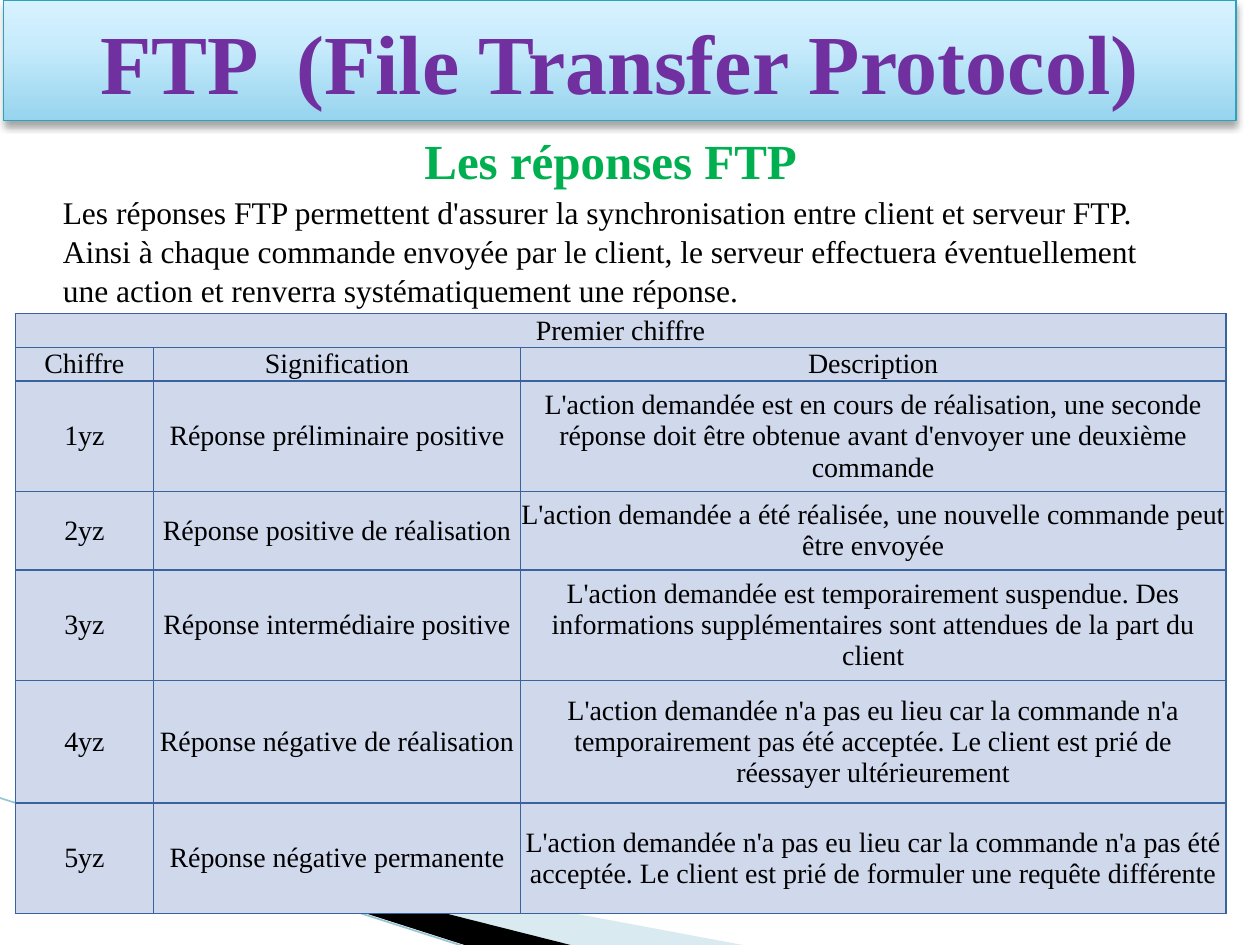
from dataclasses import dataclass

import pptx
import pptx.dml.color
import pptx.enum.shapes
import pptx.enum.text
import pptx.oxml
import pptx.oxml.ns
import pptx.util
from pptx.util import Inches

ALIGN = pptx.enum.text.PP_ALIGN
ANCHOR = pptx.enum.text.MSO_ANCHOR


@dataclass(frozen=True)
class Theme:
    font: str = "Times New Roman"
    title: str = "7030A0"
    heading: str = "00B050"
    text: str = "000000"
    banner_line: str = "2DA2BF"
    banner_stops: tuple = ((0, "96D4EE"), (65, "C9ECFC"), (100, "D7F2FF"))
    wave_light: str = "A0CBDC"
    wave_dark: str = "000000"
    wave_line: str = "97C5D8"
    cell: str = "D0D8EC"
    border: str = "39639D"
    title_size: int = 48
    heading_size: int = 28
    body_size: int = 18
    table_size: int = 16


THEME = Theme()

COLUMNS = (1.1, 2.91, 5.6)
ROWS = (0.26, 0.26, 0.88, 0.62, 0.88, 0.97, 0.88)
REPLIES = (
    ("Premier chiffre", "", ""),
    ("Chiffre", "Signification", "Description"),
    ("1yz", "Réponse préliminaire positive",
     "L'action demandée est en cours de réalisation, une seconde réponse doit "
     "être obtenue avant d'envoyer une deuxième commande"),
    ("2yz", "Réponse positive de réalisation",
     "L'action demandée a été réalisée, une nouvelle commande peut être envoyée"),
    ("3yz", "Réponse intermédiaire positive",
     "L'action demandée est temporairement suspendue. Des informations "
     "supplémentaires sont attendues de la part du client"),
    ("4yz", "Réponse négative de réalisation",
     "L'action demandée n'a pas eu lieu car la commande n'a temporairement pas "
     "été acceptée. Le client est prié de réessayer ultérieurement"),
    ("5yz", "Réponse négative permanente",
     "L'action demandée n'a pas eu lieu car la commande n'a pas été acceptée. "
     "Le client est prié de formuler une requête différente"),
)


def rgb(color):
    return pptx.dml.color.RGBColor.from_string(color)


def xml(body):
    """Parse one DrawingML element, given without its namespace declaration."""
    tag, rest = body.split(" ", 1)
    return pptx.oxml.parse_xml(f"{tag} {pptx.oxml.ns.nsdecls('a')} {rest}")


def write(tf, text, *, size, color=THEME.text, bold=False, align=ALIGN.LEFT, spacing=None):
    p = tf.paragraphs[0]
    p.alignment = align
    if spacing:
        p.line_spacing = spacing
    r = p.add_run()
    r.text = text
    r.font.name = THEME.font
    r.font.size = pptx.util.Pt(size)
    r.font.bold = bold
    r.font.color.rgb = rgb(color)


def add_text(s, text, left, top, width, height, wrap=True, **fmt):
    tf = s.shapes.add_textbox(*map(Inches, (left, top, width, height))).text_frame
    tf.word_wrap = wrap
    write(tf, text, **fmt)


def add_wave(s, points, color, alpha=None):
    start, *others = [tuple(map(Inches, point)) for point in points]
    builder = s.shapes.build_freeform(*start)
    builder.add_line_segments(others, close=True)
    sp = builder.convert_to_shape()
    sp.shadow.inherit = False
    sp.line.fill.background()
    sp.fill.solid()
    sp.fill.fore_color.rgb = rgb(color)
    if alpha:
        fill_color = sp._element.spPr.find(".//" + pptx.oxml.ns.qn("a:srgbClr"))
        fill_color.append(xml(f'<a:alpha val="{alpha * 1000}"/>'))


def add_line(s, start, end, color, width):
    line = s.shapes.add_connector(
        pptx.enum.shapes.MSO_CONNECTOR.STRAIGHT, *map(Inches, start + end))
    line.line.color.rgb = rgb(color)
    line.line.width = pptx.util.Pt(width)
    line._element.spPr.append(xml("<a:effectLst />"))


def add_banner(s, text, left, top, width, height):
    sp = s.shapes.add_shape(
        pptx.enum.shapes.MSO_SHAPE.RECTANGLE, *map(Inches, (left, top, width, height)))
    sp.line.color.rgb = rgb(THEME.banner_line)
    sp.line.width = pptx.util.Pt(0.75)
    sp.fill.gradient()
    sp.fill.gradient_angle = 90
    stops = sp._element.spPr.find(".//" + pptx.oxml.ns.qn("a:gsLst"))
    stops[:] = [xml(f'<a:gs pos="{pos * 1000}"><a:srgbClr val="{color}"/></a:gs>')
                for pos, color in THEME.banner_stops]
    sp.shadow.inherit = False
    effects = sp._element.spPr.find(pptx.oxml.ns.qn("a:effectLst"))
    effects.append(xml(
        '<a:outerShdw blurRad="50800" dist="38100" dir="5400000" rotWithShape="0">'
        '<a:srgbClr val="000000"><a:alpha val="35000"/></a:srgbClr></a:outerShdw>'))
    tf = sp.text_frame
    tf.word_wrap = True
    tf.vertical_anchor = ANCHOR.MIDDLE
    write(tf, text, size=THEME.title_size, color=THEME.title, bold=True, align=ALIGN.CENTER)


def format_cell(cell):
    cell.margin_left = cell.margin_right = cell.margin_top = cell.margin_bottom = 0
    cell.vertical_anchor = ANCHOR.MIDDLE
    tc_pr = cell._tc.get_or_add_tcPr()
    for side in "LRTB":
        tc_pr.append(xml(f'<a:ln{side} w="9525"><a:solidFill><a:srgbClr '
                         f'val="{THEME.border}"/></a:solidFill></a:ln{side}>'))
    cell.fill.solid()
    cell.fill.fore_color.rgb = rgb(THEME.cell)


def add_reply_table(s, left, top):
    table = s.shapes.add_table(
        len(ROWS), len(COLUMNS), Inches(left), Inches(top),
        Inches(sum(COLUMNS)), Inches(sum(ROWS))).table
    table.first_row = table.horz_banding = False
    for column, width in zip(table.columns, COLUMNS):
        column.width = Inches(width)
    for row, height, texts in zip(table.rows, ROWS, REPLIES):
        row.height = Inches(height)
        for cell, text in zip(row.cells, texts):
            format_cell(cell)
            if text:
                write(cell.text_frame, text, size=THEME.table_size, align=ALIGN.CENTER)
    table.cell(0, 0).merge(table.cell(0, len(COLUMNS) - 1))


def main():
    prs = pptx.Presentation()
    prs.slide_width, prs.slide_height = Inches(10), Inches(7.5)
    s = prs.slides.add_slide(prs.slide_layouts[6])

    add_wave(s, [(0.55, 6.5), (5.95, 7.51), (4.56, 7.51)], THEME.wave_light, alpha=40)
    add_wave(s, [(0.53, 6.49), (4.57, 7.51), (3.72, 7.51)], THEME.wave_dark)
    add_line(s, (-0.01, 6.33), (3.71, 7.52), THEME.wave_line, 0.95)

    add_banner(s, "FTP  (File Transfer Protocol)", 0.03, 0, 9.78, 0.96)
    add_text(s, "Les réponses FTP", 3.27, 0.99, 3.19, 0.57, wrap=False,
             size=THEME.heading_size, color=THEME.heading, bold=True)
    add_text(s, "Les réponses FTP permettent d'assurer la synchronisation entre client et "
             "serveur FTP. Ainsi à chaque commande envoyée par le client, le serveur "
             "effectuera éventuellement une action et renverra systématiquement une réponse.",
             0.4, 1.47, 8.82, 1.31, size=THEME.body_size, spacing=1.04)
    add_reply_table(s, 0.12, 2.49)

    prs.save("out.pptx")


if __name__ == "__main__":
    main()
